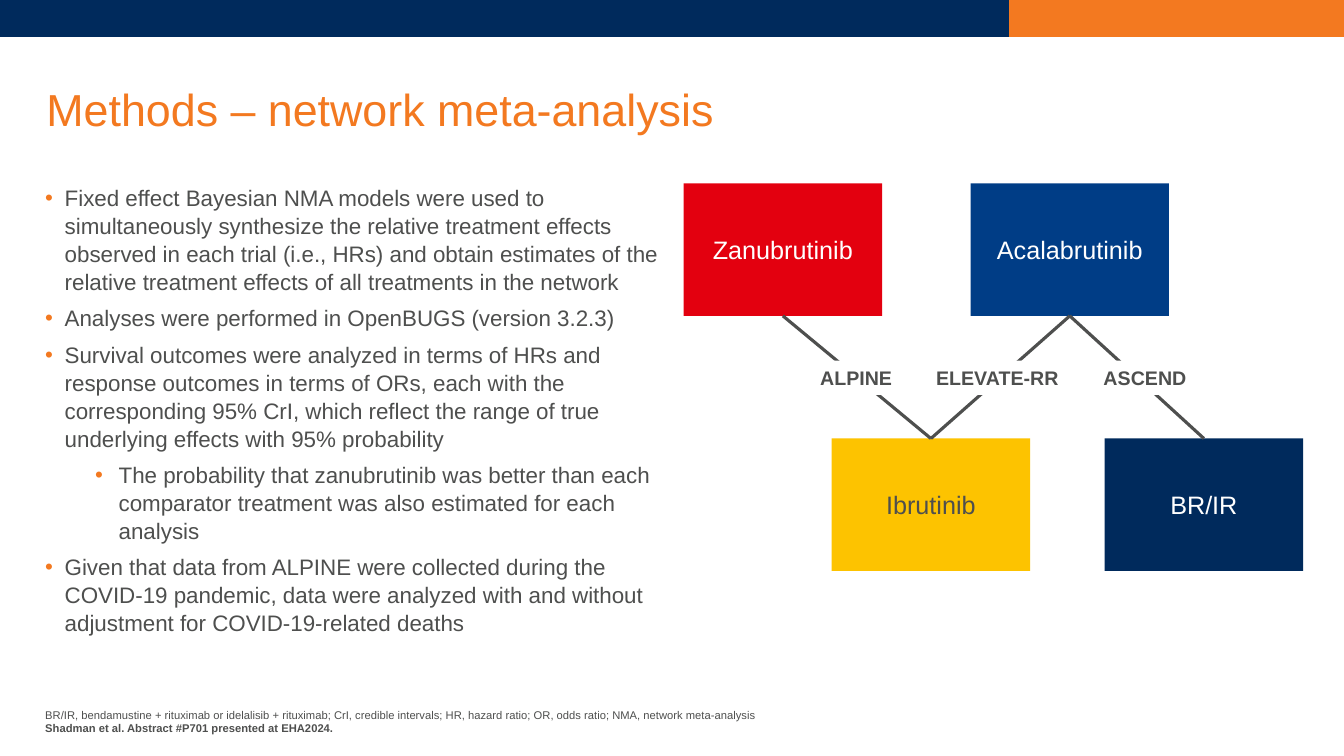
from lxml import etree
from pptx import Presentation, util as u
from pptx.dml.color import RGBColor
from pptx.enum import shapes, text
from pptx.oxml import ns

NAVY, ORANGE, GREY, WHITE = "002A5C", "F37920", "4E4F4E", "FFFFFF"
TITLE = "Methods – network meta-analysis"
BULLETS = [  # level, text
    (0, "Fixed effect Bayesian NMA models were used to simultaneously synthesize the relative "
        "treatment effects observed in each trial (i.e., HRs) and obtain estimates of the "
        "relative treatment effects of all treatments in the network"),
    (0, "Analyses were performed in OpenBUGS (version 3.2.3)"),
    (0, "Survival outcomes were analyzed in terms of HRs and response outcomes in terms of ORs, "
        "each with the corresponding 95% CrI, which reflect the range of true underlying "
        "effects with 95% probability"),
    (1, "The probability that zanubrutinib was better than each comparator treatment was also "
        "estimated for each analysis"),
    (0, "Given that data from ALPINE were collected during the COVID-19 pandemic, data were "
        "analyzed with and without adjustment for COVID-19-related deaths"),
]
INDENTS = [(0.49, -0.49), (1.85, -0.59)]  # left margin, first line, by level
FOOTNOTES = [
    ("BR/IR, bendamustine + rituximab or idelalisib + rituximab; CrI, credible intervals; "
     "HR, hazard ratio; OR, odds ratio; NMA, network meta-analysis", False),
    ("Shadman et al. Abstract #P701 presented at EHA2024.", True),
]
TOP_ROW, BOTTOM_ROW = 4.62, 11.05
BOX_W, BOX_H = 5, 3.34
TREATMENTS = {  # name: left, top, fill, text colour
    "Zanubrutinib": (17.23, TOP_ROW, "E3000F", WHITE),
    "Ibrutinib": (20.96, BOTTOM_ROW, "FDC300", GREY),
    "Acalabrutinib": (24.46, TOP_ROW, "003D86", WHITE),
    "BR/IR": (27.84, BOTTOM_ROW, NAVY, WHITE),
}
TRIALS = [  # name, upper box, lower box, label left, label width
    ("ALPINE", "Zanubrutinib", "Ibrutinib", 20.42, 2.44),
    ("ELEVATE-RR", "Acalabrutinib", "Ibrutinib", 23.34, 3.61),
    ("ASCEND", "Acalabrutinib", "BR/IR", 27.56, 3),
]
SLIDE_W, SLIDE_H = 33.87, 19.05
BAND_SPLIT, BAND_H = 25.43, 0.93


def rgb(color):
    return RGBColor.from_string(color)


def frame(sp, anchor, inset=0):
    tf = sp.text_frame
    tf.word_wrap, tf.auto_size, tf.vertical_anchor = True, text.MSO_AUTO_SIZE.NONE, anchor
    tf.margin_left = tf.margin_right = tf.margin_top = tf.margin_bottom = u.Cm(inset)
    return tf


def write(p, words, size, color=GREY, bold=False, align=text.PP_ALIGN.LEFT):
    p.alignment = align
    r = p.add_run()
    r.text = words
    r.font.name, r.font.size, r.font.bold = "Arial", u.Pt(size), bold
    r.font.color.rgb = rgb(color)


def paragraphs(tf, items):
    for i, item in enumerate(items):
        yield (tf.add_paragraph() if i else tf.paragraphs[0]), item


def place(sp, *box):
    sp.left, sp.top, sp.width, sp.height = map(u.Cm, box)
    return sp


def rect(fill, *box):
    sp = s.shapes.add_shape(shapes.MSO_SHAPE.RECTANGLE, *map(u.Cm, box))
    sp.shadow.inherit = False
    sp.fill.solid()
    sp.fill.fore_color.rgb = rgb(fill)
    sp.line.fill.background()
    return sp


def bullet(p, level):
    p.level = level
    pPr = p._p.get_or_add_pPr()
    for key, cm in zip(("marL", "indent"), INDENTS[level]):
        pPr.set(key, str(u.Cm(cm)))
    clr = etree.SubElement(pPr, ns.qn("a:buClr"))
    etree.SubElement(clr, ns.qn("a:srgbClr"), val=ORANGE)
    etree.SubElement(pPr, ns.qn("a:buFont"), typeface="Arial")
    etree.SubElement(pPr, ns.qn("a:buChar"), char="•")


prs = Presentation()
prs.slide_width, prs.slide_height = u.Cm(SLIDE_W), u.Cm(SLIDE_H)
s = prs.slides.add_slide(prs.slide_layouts[1])

# Title and bullet list
title, body = s.placeholders[0], s.placeholders[1]
p = frame(place(title, 1.17, 1.6, 31.57, 2.46), text.MSO_ANCHOR.MIDDLE).paragraphs[0]
p.line_spacing = 0.9
write(p, TITLE, 32, ORANGE)
tf = frame(place(body, 1.14, TOP_ROW, 15.49, 11.13), text.MSO_ANCHOR.TOP)
for p, (level, words) in paragraphs(tf, BULLETS):
    bullet(p, level)
    p.space_before, p.space_after, p.line_spacing = u.Pt(0), u.Pt(6), 1.04
    write(p, words, 16)

# Top band
rect(NAVY, 0, 0, BAND_SPLIT, BAND_H)
rect(ORANGE, BAND_SPLIT, 0, SLIDE_W - BAND_SPLIT, BAND_H)

# Treatment boxes
boxes = {}
for name, (left, top, fill, color) in TREATMENTS.items():
    boxes[name] = rect(fill, left, top, BOX_W, BOX_H)
    tf = frame(boxes[name], text.MSO_ANCHOR.MIDDLE, 0.13)
    write(tf.paragraphs[0], name, 18, color, align=text.PP_ALIGN.CENTER)

# Trial lines, each with its label on top
for _, upper, lower, *_ in TRIALS:
    line = s.shapes.add_connector(shapes.MSO_CONNECTOR.STRAIGHT, 0, 0, 0, 0)
    line.begin_connect(boxes[upper], 2)
    line.end_connect(boxes[lower], 0)
    line.line.color.rgb, line.line.width = rgb(GREY), u.Pt(2.25)
    etree.SubElement(line._element.spPr, ns.qn("a:effectLst"))
for name, _, _, left, width in TRIALS:
    tf = frame(rect(WHITE, left, 9.09, width, 0.86), text.MSO_ANCHOR.TOP, 0.13)
    tf.margin_left, tf.margin_right = u.Cm(0.25), 0
    write(tf.paragraphs[0], name, 14, bold=True)

# Footnotes
note = s.shapes.add_textbox(*map(u.Cm, (1.14, 17.45, 23.7, 1.07)))
for p, (words, bold) in paragraphs(frame(note, text.MSO_ANCHOR.BOTTOM), FOOTNOTES):
    write(p, words, 8, bold=bold)

prs.save("out.pptx")
